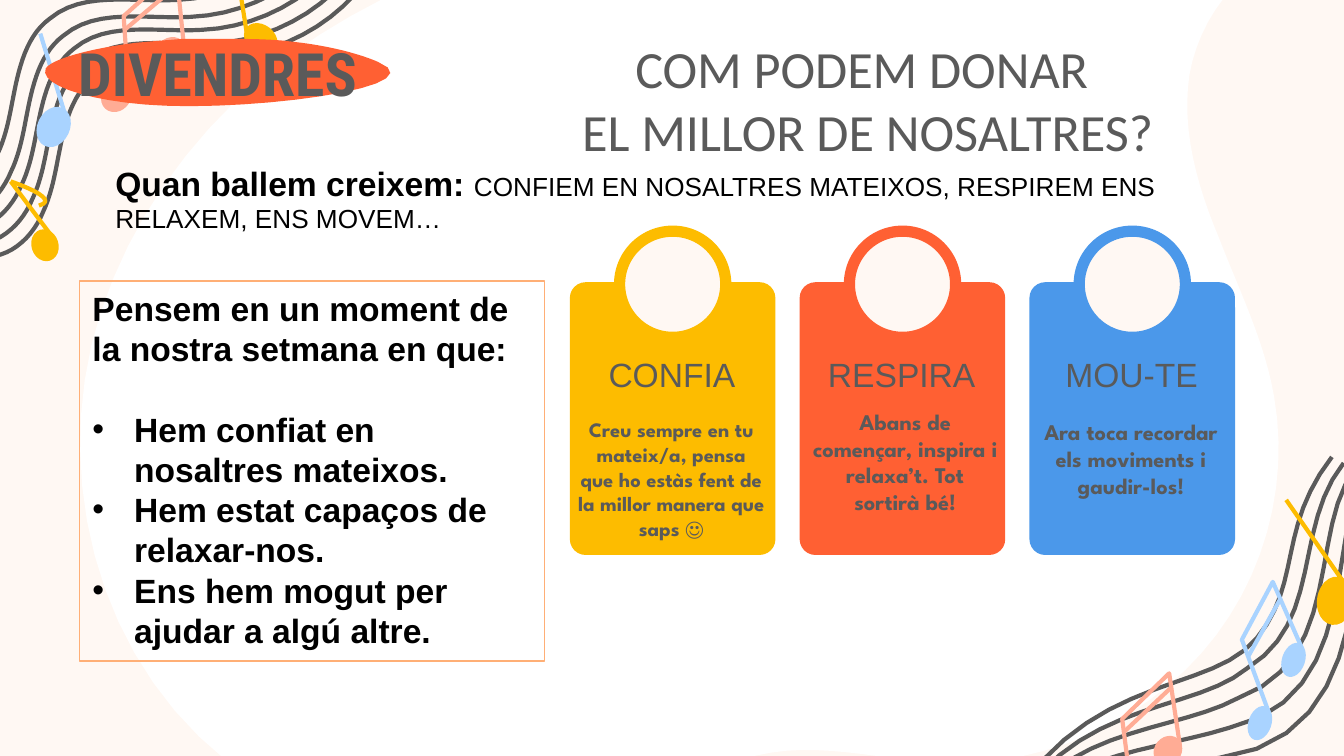
from dataclasses import dataclass
from typing import Any

from lxml.etree import SubElement
from pptx import Presentation
from pptx.dml.color import RGBColor
from pptx.enum.shapes import MSO_CONNECTOR, MSO_SHAPE
from pptx.enum.text import MSO_ANCHOR, MSO_AUTO_SIZE, PP_ALIGN
from pptx.oxml.ns import qn
from pptx.util import Inches, Pt

Point = tuple[float, float]


@dataclass(frozen=True)
class Theme:
    cream: str = "FFF8F3"
    white: str = "FFFFFF"
    grey: str = "5A5A5A"
    black: str = "000000"
    orange: str = "FF6033"
    yellow: str = "FDBC00"
    blue: str = "4B98EA"
    pink: str = "FFAC95"
    sky: str = "A9D3FF"
    peach: str = "FFAF76"
    title: float = 28
    banner: float = 32
    main: float = 18
    lead: float = 14
    thin: float = 0.75
    pen: float = 2.25
    ring: float = 6


@dataclass(frozen=True)
class Box:
    x: float
    y: float
    w: float
    h: float
    turn: float = 0


@dataclass(frozen=True)
class Note:
    color: str
    heads: tuple[Box, ...]
    stems: tuple[tuple[Point, ...], ...]


@dataclass(frozen=True)
class Card:
    x: float
    color: str
    name: str
    text: str
    top: float
    size: float = 12
    nudge: float = 0


T = Theme()
# Curves are a start point followed by two handles and an end for each piece.
BLOB = ((8.85, .56), (8.79, .97), (8.91, 1.39), (9.07, 1.77), (9.22, 2.16), (9.41, 2.54),
        (9.48, 2.95), (9.6, 3.62), (9.4, 4.34), (8.94, 4.86), (8.48, 5.38), (7.78, 5.69),
        (7.07, 5.68), (6.63, 5.67), (6.18, 5.53), (5.74, 5.6), (5.29, 5.67), (4.9, 5.95),
        (4.48, 6.11), (3.46, 6.51), (2.24, 6.22), (1.48, 5.48), (.72, 4.74), (.44, 3.6),
        (.68, 2.57), (.93, 1.55), (1.66, .65), (2.61, .12), (3.55, -.42), (4.68, -.6),
        (5.76, -.47), (6.28, -.41), (6.8, -.28), (7.33, -.24), (7.86, -.21), (8.43, -.27),
        (8.87, -.57), (9.12, -.5), (9.38, -.43), (9.63, -.36), (9.21, -.26), (8.92, .15),
        (8.85, .56))
OVAL = ((1.67, .29), (1.56, .29), (1.45, .29), (1.35, .29), (1.23, .3), (1.1, .31),
        (1, .32), (.68, .36), (.38, .44), (.34, .51), (.28, .64), (.74, .79), (1.39, .79),
        (1.4, .79), (1.41, .79), (1.42, .79), (2.15, .79), (3.23, .63), (2.81, .46),
        (2.67, .4), (2.45, .34), (2.17, .31), (2.02, .29), (1.85, .29), (1.67, .29))
# Each staff: first line, last line, and where its five lines lie between them.
STAVES = (
    (((7.6, 5.85), (8.21, 5.01), (9.02, 5.15), (9.35, 4.75), (9.69, 4.34), (9.5, 3.93), (9.91, 3.4)),
     ((7.65, 6.08), (7.84, 5.81), (8.54, 5.71), (9.07, 5.64), (10.32, 5.48), (9.97, 3.91), (10.26, 3.58)),
     (0, .25, .5, .75, 1)),
    (((-.42, 1.49), (-.24, 1.48), (-.09, 1.32), (-.02, 1.15), (.06, .99), (.08, .8), (.12, .62),
      (.16, .44), (.22, .25), (.37, .14), (.62, -.07), (.99, .02), (1.32, 0), (1.82, -.02),
      (2.29, -.33), (2.51, -.77)),
     ((-.08, 1.91), (.1, 1.9), (.25, 1.75), (.32, 1.58), (.4, 1.41), (.42, 1.22), (.46, 1.04),
      (.5, .86), (.56, .68), (.71, .56), (.96, .35), (1.33, .44), (1.66, .42), (2.16, .4),
      (2.63, .1), (2.85, -.35)),
     (0, .3, .53, .77, 1)),
)
FLAG = ((.08, 1.35), (.08, 1.35), (.47, 1.48), (.29, 1.53))
NOTES = (
    Note(T.pink, (Box(8.59, 5.5, .2, .17, 310),),
         (((8.42, 5.89), (8.35, 5.35), (8.7, 5.01), (8.78, 5.55)), ((8.37, 5.44), (8.71, 5.12)))),
    Note(T.sky, (Box(9.26, 5.31, .23, .14, 288.7), Box(9.51, 4.84, .23, .14, 288.7)),
         (((9.44, 5.3), (9.24, 4.76), (9.47, 4.33), (9.69, 4.83)), ((9.29, 4.88), (9.53, 4.45)))),
    Note(T.yellow, (Box(9.77, 4.35, .33, .24, 277.5),), (((10.01, 4.35), (9.57, 3.72)),)),
    Note(T.pink, (Box(.76, .63, .21, .18, 313), Box(1.16, .3, .22, .19, 313)),
         (((.96, .71), (.92, .12), (1.31, -.23), (1.37, .36)), ((.93, .22), (1.32, -.11)))),
    Note(T.sky, (Box(.26, .84, .28, .21, 295.7),), (((.49, .87), (.3, .25)),)),
    Note(T.yellow, (Box(1.82, .2, .24, .18, 38.4),), (((1.84, .27), (1.75, -.3)),)),
    Note(T.yellow, (Box(.25, 1.72, .17, .21, 342.7),), (((.38, 1.75), (.08, 1.35)),)),
)
CARDS = (
    Card(4.24, T.yellow, "CONFIA", "Creu sempre en tu mateix/a, pensa que ho estàs fent "
         "de la millor manera que saps ☺", 3.4, 11),
    Card(5.95, T.orange, "RESPIRA", "Abans de començar, inspira i relaxa’t. Tot sortirà bé!",
         3.27, nudge=.03),
    Card(7.66, T.blue, "MOU-TE", "Ara toca recordar els moviments i gaudir-los!", 3.25),
)
GOALS = ("Hem confiat en nosaltres mateixos.", "Hem estat capaços de relaxar-nos.",
         "Ens hem mogut per ajudar a algú altre.")


def apply(item: Any, values: dict[str, Any]) -> None:
    for key, value in values.items():
        setattr(item, key, value)


def paint(shape: Any, fill: str | None = None, line: str | None = None, width: float = T.pen) -> None:
    shape.shadow.inherit = False
    for part, color in ((shape.fill, fill), (shape.line.fill, line)):
        if color:
            part.solid()
            part.fore_color.rgb = RGBColor.from_string(color)
        else:
            part.background()
    if line:
        shape.line.width = Pt(width)


def place(box: Box) -> tuple[int, ...]:
    return tuple(Inches(v) for v in (box.x, box.y, box.w, box.h))


def solid(slide: Any, kind: MSO_SHAPE, box: Box, *look: Any) -> Any:
    shape = slide.shapes.add_shape(kind, *place(box))
    shape.rotation = box.turn
    paint(shape, *look)
    return shape


def bend(knots: tuple[Point, ...], steps: int = 12) -> list[Point]:
    """Sample a chain of cubic Bézier pieces."""
    dots = [knots[0]]
    for n in range(0, len(knots) - 1, 3):
        for i in range(1, steps + 1):
            t, u = i / steps, 1 - i / steps
            mix = (u ** 3, 3 * u * u * t, 3 * u * t * t, t ** 3)
            dots.append(tuple(sum(m * k[a] for m, k in zip(mix, knots[n:n + 4])) for a in (0, 1)))
    return dots


def trace(slide: Any, dots: Any, close: bool, *look: Any) -> Any:
    spots = [(Inches(x), Inches(y)) for x, y in dots]
    pen = slide.shapes.build_freeform(*spots[0])
    pen.add_line_segments(spots[1:], close=close)
    shape = pen.convert_to_shape()
    paint(shape, *look)
    return shape


def stroke(slide: Any, dots: Any, color: str) -> None:
    if len(dots) > 2:
        trace(slide, dots, False, None, color)
        return
    ends = [Inches(v) for dot in dots for v in dot]
    line = slide.shapes.add_connector(MSO_CONNECTOR.STRAIGHT, *ends)
    line.line.color.rgb = RGBColor.from_string(color)
    line.line.width = Pt(T.pen)
    SubElement(line.element.spPr, qn("a:effectLst"))


def setup(shape: Any, anchor: MSO_ANCHOR, side: float, top: float) -> Any:
    frame = shape.text_frame
    apply(frame, dict(word_wrap=True, auto_size=MSO_AUTO_SIZE.NONE, vertical_anchor=anchor,
                      margin_left=Inches(side), margin_right=Inches(side),
                      margin_top=Inches(top), margin_bottom=Inches(top)))
    return frame


def write(para: Any, text: str, font: str, size: float, color: str, bold: bool = False,
          align: PP_ALIGN = PP_ALIGN.CENTER) -> None:
    para.alignment = align
    for n, part in enumerate(text.split("\n")):
        if n:
            para.add_line_break()
        run = para.add_run()
        run.text = part
        apply(run.font, dict(name=font, size=Pt(size), bold=bold))
        run.font.color.rgb = RGBColor.from_string(color)


def label(slide: Any, box: Box, pad: float, *look: Any) -> None:
    shape = slide.shapes.add_textbox(*place(box))
    write(setup(shape, MSO_ANCHOR.MIDDLE, pad, pad).paragraphs[0], *look)


def scene(slide: Any) -> None:
    trace(slide, bend(BLOB), True, T.white)
    for first, last, shares in STAVES:
        for s in shares:
            knots = tuple((a + (c - a) * s, b + (d - b) * s) for (a, b), (c, d) in zip(first, last))
            stroke(slide, bend(knots), T.grey)
    for note in NOTES:
        for head in note.heads:
            solid(slide, MSO_SHAPE.OVAL, head, note.color, note.color)
        for stem in note.stems:
            stroke(slide, stem, note.color)
    stroke(slide, bend(FLAG), T.yellow)


def tag(slide: Any, card: Card) -> None:
    body = solid(slide, MSO_SHAPE.ROUNDED_RECTANGLE, Box(card.x, 2.1, 1.53, 2.03), card.color)
    body.adjustments[0] = .077
    left = card.x - .04
    label(slide, Box(left, 2.66, 1.6, .25), 0, card.name, "Arial", T.main, T.grey)
    label(slide, Box(left + card.nudge, card.top, 1.59, .33), .1,
          card.text, "League Spartan", card.size, T.grey, True)
    solid(slide, MSO_SHAPE.OVAL, Box(card.x + .37, 1.72, .79, .79), T.cream, card.color, T.ring)


def bullet(para: Any) -> None:
    props = para._p.get_or_add_pPr()
    props.set("marL", str(Inches(.31)))
    props.set("indent", str(-Inches(.31)))
    SubElement(props, qn("a:buFont")).set("typeface", "Arial")
    SubElement(props, qn("a:buChar")).set("char", "•")


def panel(slide: Any) -> None:
    shape = solid(slide, MSO_SHAPE.RECTANGLE, Box(.59, 2.09, 3.46, 2.83), None, T.peach, T.thin)
    frame = setup(shape, MSO_ANCHOR.TOP, .1, .05)
    look = ("Arial", T.main, T.black, True, PP_ALIGN.LEFT)
    write(frame.paragraphs[0], "Pensem en un moment de la nostra setmana en que:", *look)
    for n, goal in enumerate(GOALS):
        para = frame.add_paragraph()
        if n == 0:
            para.space_before = Pt(21.6)
        bullet(para)
        write(para, goal, *look)


def main() -> None:
    deck = Presentation()
    wide = Inches(10)
    apply(deck, dict(slide_width=wide, slide_height=wide * 9 // 16))
    slide = deck.slides.add_slide(deck.slide_layouts[5])
    slide.background.fill.solid()
    slide.background.fill.fore_color.rgb = RGBColor.from_string(T.cream)
    scene(slide)

    title = slide.shapes.title
    slide.shapes.element.append(title.element)
    apply(title, dict(zip(("left", "top", "width", "height"), place(Box(2.24, .17, 8.43, .63)))))
    write(setup(title, MSO_ANCHOR.TOP, .1, .1).paragraphs[0],
          "COM PODEM DONAR \nEL MILLOR DE NOSALTRES?", "Calibri", T.title, T.grey)
    for card in CARDS:
        tag(slide, card)

    intro = slide.shapes.add_textbox(*place(Box(.76, 1.16, 8.72, .64)))
    para = setup(intro, MSO_ANCHOR.TOP, .1, .05).paragraphs[0]
    write(para, "Quan ballem creixem: ", "Arial", T.main, T.black, True, PP_ALIGN.LEFT)
    write(para, "CONFIEM EN NOSALTRES MATEIXOS, RESPIREM ENS RELAXEM, ENS MOVEM…",
          "Arial", T.lead, T.black, False, PP_ALIGN.LEFT)
    banner = trace(slide, bend(OVAL), True, T.orange)
    write(setup(banner, MSO_ANCHOR.MIDDLE, .1, .1).paragraphs[0],
          "DIVENDRES", "Roboto Condensed", T.banner, T.grey, True)
    panel(slide)
    deck.save("out.pptx")


if __name__ == "__main__":
    main()
